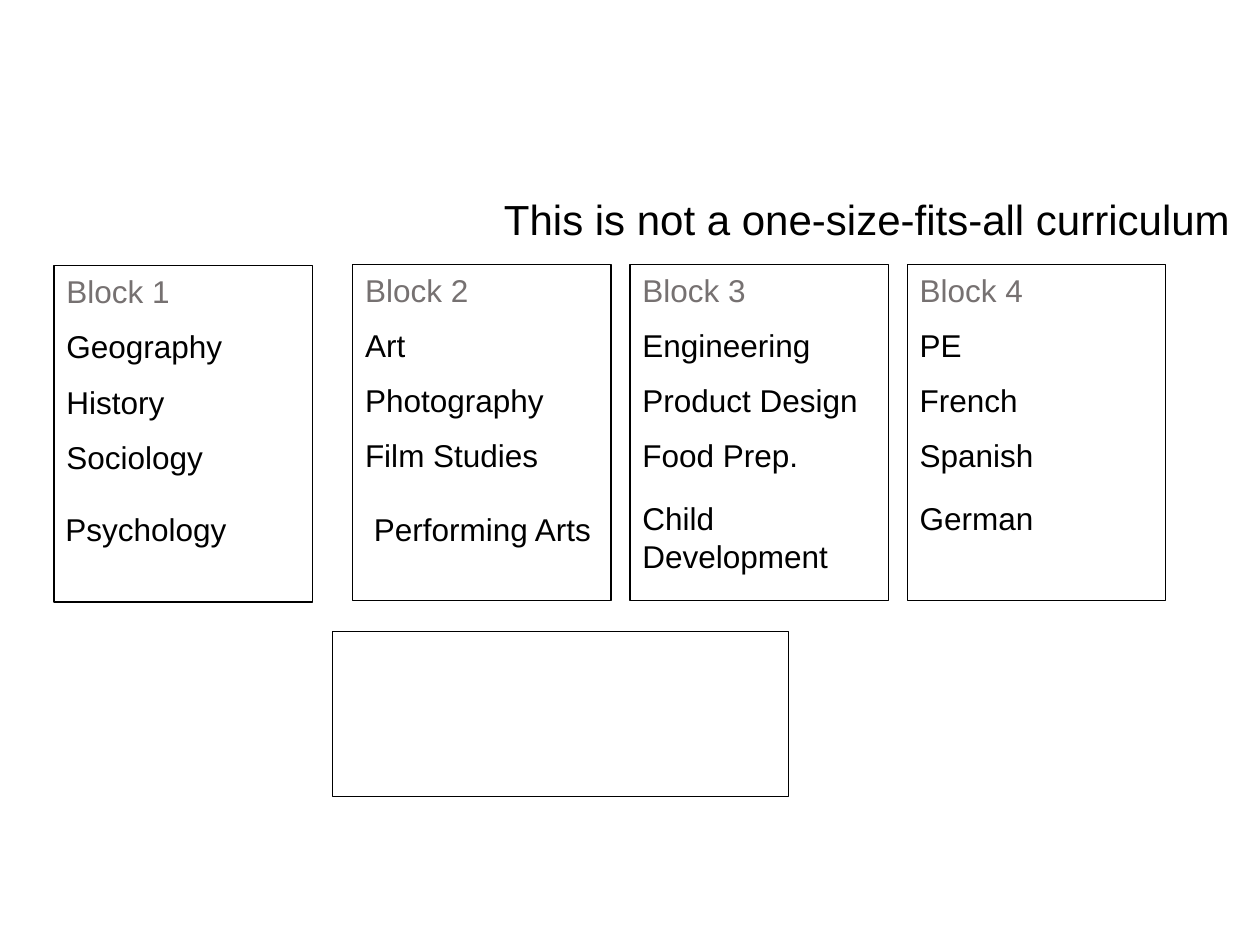
from typing import NamedTuple

from pptx import Presentation
from pptx.dml.color import RGBColor
from pptx.enum.shapes import MSO_SHAPE as Shape
from pptx.enum.text import MSO_ANCHOR as Anchor, PP_ALIGN as Align
from pptx.util import Cm, Pt

BLACK, GREY, WHITE = "000000", "767171", "FFFFFF"
BLOCK_WIDTH, BLOCK_HEIGHT = 5.21, 6.78
BLOCK_TOP = 5.33
SECOND_LEFT, BLOCK_PITCH = 7.11, 5.59


class Block(NamedTuple):
    left: float
    top: float
    subjects: list[str]
    fill: str | None = None


class Label(NamedTuple):
    text: str
    left: float
    top: float
    width: float
    height: float


BLOCKS = [
    Block(1.09, 5.36, ["Geography", "History", "Sociology"], WHITE),
    Block(SECOND_LEFT, BLOCK_TOP, ["Art", "Photography", "Film Studies"]),
    Block(SECOND_LEFT + BLOCK_PITCH, BLOCK_TOP,
          ["Engineering", "Product Design", "Food Prep."]),
    Block(SECOND_LEFT + 2 * BLOCK_PITCH, BLOCK_TOP, ["PE", "French", "Spanish"]),
]
EXTRA_SUBJECTS = [
    Label("Child Development", 12.7, 9.93, 5, 1.8),
    Label("Performing Arts", 7.29, 10.16, 5, 1.02),
    Label("German", 18.29, 9.93, 4.19, 1.02),
    Label("Psychology", 1.07, 10.16, 4.39, 1.02),
]
TITLE = Label("This is not a one-size-fits-all curriculum", 9.91, 2.79, 15.19, 2.24)


def color(value: str) -> RGBColor:
    return RGBColor.from_string(value)


def style(paragraph, text: str, size: float = 18, ink: str = BLACK) -> None:
    paragraph.text = text
    paragraph.alignment = Align.LEFT
    paragraph.font.name = "Arial"
    paragraph.font.size = Pt(size)
    paragraph.font.color.rgb = color(ink)


def add_frame(slide, left: float, top: float, width: float, height: float,
              fill: str | None = None):
    shape = slide.shapes.add_shape(
        Shape.RECTANGLE, Cm(left), Cm(top), Cm(width), Cm(height))
    shape.shadow.inherit = False
    if fill:
        shape.fill.solid()
        shape.fill.fore_color.rgb = color(fill)
    else:
        shape.fill.background()
    shape.line.color.rgb = color(BLACK)
    shape.line.width = Pt(0.75)
    return shape


def add_block(slide, number: int, block: Block) -> None:
    frame = add_frame(slide, block.left, block.top, BLOCK_WIDTH, BLOCK_HEIGHT,
                      block.fill).text_frame
    frame.vertical_anchor = Anchor.TOP
    style(frame.paragraphs[0], f"Block {number}", ink=GREY)
    for subject in block.subjects:
        paragraph = frame.add_paragraph()
        style(paragraph, subject)
        paragraph.space_before = Pt(10)


def add_label(slide, label: Label, size: float = 18):
    frame = slide.shapes.add_textbox(
        Cm(label.left), Cm(label.top), Cm(label.width), Cm(label.height)).text_frame
    frame.word_wrap = True
    style(frame.paragraphs[0], label.text, size)
    return frame


def main() -> None:
    presentation = Presentation()
    presentation.slide_width, presentation.slide_height = Cm(25.4), Cm(19.05)
    slide = presentation.slides.add_slide(presentation.slide_layouts[6])

    # Option blocks
    for number, block in enumerate(BLOCKS, start=1):
        add_block(slide, number, block)

    # Empty frame below the blocks
    add_frame(slide, 6.71, 12.73, 9.19, 3.33)

    # Fifth subject of each block
    for label in EXTRA_SUBJECTS:
        add_label(slide, label)

    # Title
    title = add_label(slide, TITLE, 24)
    title.vertical_anchor = Anchor.BOTTOM
    title.paragraphs[0].line_spacing = 0.8

    presentation.save("out.pptx")


if __name__ == "__main__":
    main()
